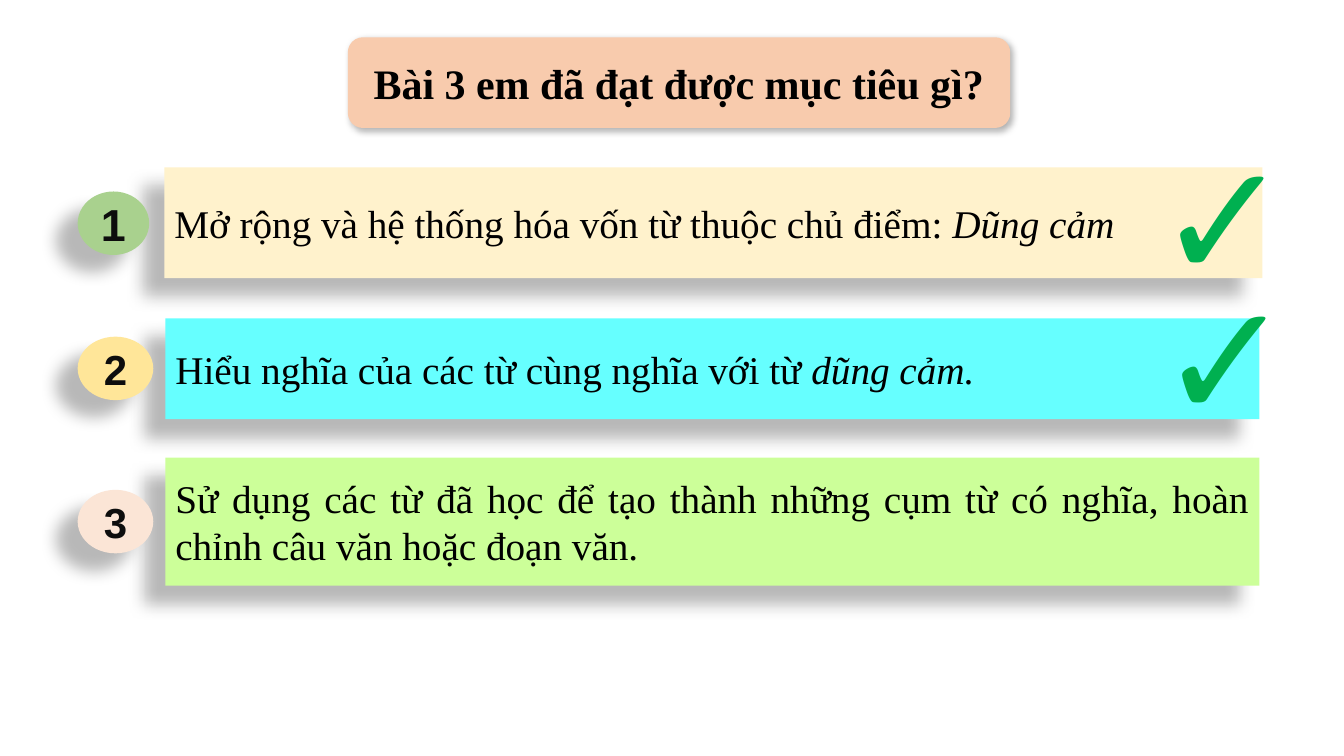
"""Build the slide that reviews the three goals of lesson 3."""
from lxml import etree
from pptx import Presentation
from pptx.dml.color import RGBColor
from pptx.enum.shapes import MSO_SHAPE
from pptx.enum.text import MSO_ANCHOR, MSO_AUTO_SIZE, PP_ALIGN
from pptx.oxml.ns import qn
from pptx.util import Pt

RECT, OVAL, ROUND = MSO_SHAPE.RECTANGLE, MSO_SHAPE.OVAL, MSO_SHAPE.ROUNDED_RECTANGLE
CENTER, JUSTIFY, LEFT = PP_ALIGN.CENTER, PP_ALIGN.JUSTIFY, PP_ALIGN.LEFT
MIDDLE, GROW = MSO_ANCHOR.MIDDLE, MSO_AUTO_SIZE.SHAPE_TO_FIT_TEXT

BLACK = RGBColor(0x00, 0x00, 0x00)
INK = RGBColor(0x0D, 0x0D, 0x0D)
CREAM = RGBColor(0xFF, 0xF2, 0xCC)
CYAN = RGBColor(0x66, 0xFF, 0xFF)
LIME = RGBColor(0xCC, 0xFF, 0x99)
GREEN = RGBColor(0xA9, 0xD1, 0x8E)
GOLD = RGBColor(0xFF, 0xE6, 0x99)
BLUSH = RGBColor(0xFB, 0xE5, 0xD6)
PEACH = RGBColor(0xF8, 0xCB, 0xAD)
TICK = RGBColor(0x00, 0xB0, 0x50)

PX = 9144
SERIF = "Times New Roman"
DEEP = {"alpha": 28, "blur": 11.8, "dist": 19.7, "dir": 141}
SOFT = {"alpha": 30, "blur": 4.5, "dist": 2.6, "dir": 53}
GOAL = {"name": SERIF, "size": Pt(28)}
HEAD = {"name": SERIF, "size": Pt(30), "bold": True}
MARK = {"name": "Calibri", "size": Pt(115)}


def write(shape, runs, color, font, align):
    """Fill a shape with one paragraph of (text, italic) runs."""
    frame = shape.text_frame
    frame.word_wrap = True
    para = frame.paragraphs[0]
    para.alignment = align
    for text, slant in runs:
        run = para.add_run()
        run.text = text
        run.font.color.rgb = color
        for key, value in font.items():
            setattr(run.font, key, value)
        if slant:
            run.font.italic = True


def block(kind, box, fill, shade):
    """Add a filled shape with an outer shadow."""
    shape = slide.shapes.add_shape(kind, *(n * PX for n in box))
    shape.fill.solid()
    shape.fill.fore_color.rgb = fill
    shape.line.fill.background()
    shape.shadow.inherit = False
    shape.text_frame.vertical_anchor = MIDDLE
    effects = shape._element.spPr.find(qn("a:effectLst"))
    outer = etree.SubElement(effects, qn("a:outerShdw"), {
        "blurRad": str(Pt(shade["blur"])), "dist": str(Pt(shade["dist"])),
        "dir": str(shade["dir"] * 60000), "algn": "tl", "rotWithShape": "0"})
    tint = etree.SubElement(outer, qn("a:srgbClr"), val="000000")
    etree.SubElement(tint, qn("a:alpha"), val=str(shade["alpha"] * 1000))
    return shape


deck = Presentation()
deck.slide_width, deck.slide_height = 1333 * PX, 750 * PX
slide = deck.slides.add_slide(deck.slide_layouts[6])

goals = [
    ((163, 166, 1089, 110), CREAM, (77, 190, 71, 63), GREEN, 32,
     [("Mở rộng và hệ thống hóa vốn từ thuộc chủ điểm: ", False), ("Dũng cảm", True)]),
    ((164, 316, 1085, 100), CYAN, (77, 334, 75, 63), GOLD, 30,
     [("Hiểu nghĩa của các từ cùng nghĩa với từ ", False), ("dũng cảm.", True)]),
    ((164, 454, 1085, 127), LIME, (77, 486, 75, 63), BLUSH, 30,
     [("Sử dụng các từ đã học để tạo thành những cụm từ có nghĩa, "
       "hoàn chỉnh câu văn hoặc đoạn văn.", False)]),
]
for num, (bar, fill, dot, tone, size, runs) in enumerate(goals, 1):
    write(block(RECT, bar, fill, DEEP), runs, BLACK, GOAL, JUSTIFY)
    digit = {"name": "Arial", "size": Pt(size), "bold": True}
    write(block(OVAL, dot, tone, DEEP), [(str(num), False)], INK, digit, CENTER)

title = block(ROUND, (345, 37, 657, 90), PEACH, SOFT)
write(title, [("Bài 3 em đã đạt được mục tiêu gì?", False)], BLACK, HEAD, CENTER)

for left, top in ((1137, 112), (1139, 251)):
    check = slide.shapes.add_textbox(left * PX, top * PX, 112 * PX, 204 * PX)
    write(check, [("✓", False)], TICK, MARK, LEFT)
    check.text_frame.auto_size = GROW

deck.save("out.pptx")
